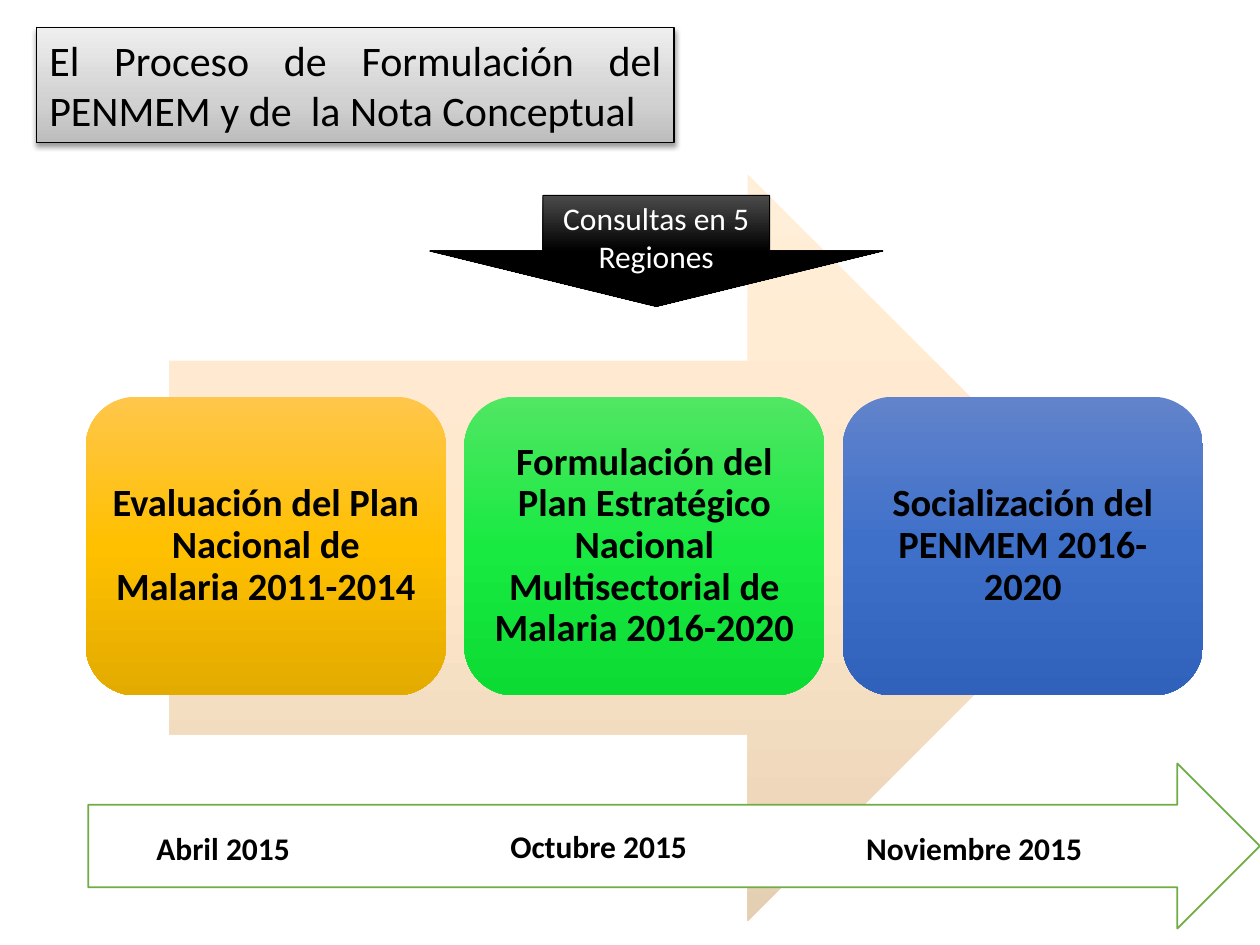
from lxml.etree import SubElement
from pptx import Presentation
from pptx.dml.color import RGBColor
from pptx.enum.shapes import MSO_SHAPE
from pptx.enum.text import MSO_ANCHOR, MSO_AUTO_SIZE, PP_ALIGN
from pptx.oxml.ns import qn
from pptx.util import Cm, Pt

CARDS = [
    ("Evaluación del Plan Nacional de Malaria 2011-2014",
     [(0, "FFC64B"), (50, "FFC000"), (100, "E3AB00")]),
    ("Formulación del Plan Estratégico Nacional Multisectorial de Malaria 2016-2020",
     [(0, "51E663"), (50, "19EA42"), (100, "0CDB34")]),
    ("Socialización del PENMEM 2016-2020",
     [(0, "6183CB"), (50, "3E70CA"), (100, "3062BB")]),
]
DATES = [("Abril 2015", 16.59), ("Octubre 2015", 16.54), ("Noviembre 2015", 16.59)]


def rgb(color):
    return RGBColor.from_string(color)


def set_gradient(sp, stops):
    """Fill from top to bottom with (percent, colour) stops."""
    sp.fill.gradient()
    sp.fill.gradient_angle = 270
    gs_list = sp._element.spPr.find(qn("a:gradFill")).find(qn("a:gsLst"))
    for gs in list(gs_list):
        gs_list.remove(gs)
    for percent, color in stops:
        gs = SubElement(gs_list, qn("a:gs"), pos=str(percent * 1000))
        SubElement(gs, qn("a:srgbClr"), val=color)


def set_line(sp, color, width):
    sp.line.color.rgb = rgb(color)
    sp.line.width = Pt(width)


def add_soft_shadow(sp):
    effects = SubElement(sp._element.spPr, qn("a:effectLst"))
    shadow = SubElement(effects, qn("a:outerShdw"), blurRad=str(Pt(3.1)),
                        dist=str(Pt(1.6)), dir="5400000", rotWithShape="0")
    color = SubElement(shadow, qn("a:srgbClr"), val="000000")
    SubElement(color, qn("a:alpha"), val="38000")


def set_text(sp, text, size, bold=False, color="000000", align=PP_ALIGN.CENTER,
             anchor=MSO_ANCHOR.MIDDLE, spacing=1.0):
    tf = sp.text_frame
    tf.word_wrap = True
    tf.auto_size = MSO_AUTO_SIZE.NONE
    tf.vertical_anchor = anchor
    p = tf.paragraphs[0]
    p.text = text
    p.alignment = align
    p.line_spacing = spacing
    p.font.name = "Calibri"
    p.font.size = Pt(size)
    p.font.bold = bold
    p.font.color.rgb = rgb(color)


def add_shape(s, kind, left, top, width, height):
    sp = s.shapes.add_shape(kind, Cm(left), Cm(top), Cm(width), Cm(height))
    sp.shadow.inherit = False
    sp.line.fill.background()
    return sp


def format_title(s):
    sp = s.shapes.title
    sp.left, sp.top, sp.width, sp.height = Cm(0.74), Cm(0.56), Cm(12.85), Cm(2.31)
    set_gradient(sp, [(0, "EEEEEE"), (65, "D1D1D1"), (100, "BDBDBD")])
    set_line(sp, "000000", 0.75)
    add_soft_shadow(sp)
    set_text(sp, "El Proceso de Formulación del PENMEM y de  la Nota Conceptual",
             24, align=PP_ALIGN.JUSTIFY, anchor=MSO_ANCHOR.TOP)


def add_process(s):
    arrow = add_shape(s, MSO_SHAPE.RIGHT_ARROW, 3.4, 3.51, 19.2, 15.06)
    set_gradient(arrow, [(0, "FFEED8"), (50, "FFE8CC"), (100, "E5CFB3")])
    for i, (text, stops) in enumerate(CARDS):
        card = add_shape(s, MSO_SHAPE.ROUNDED_RECTANGLE, 1.73 + 7.63 * i, 8, 7.26, 6.02)
        set_gradient(card, stops)
        set_text(card, text, 22, bold=True, spacing=0.9)
        tf = card.text_frame
        tf.margin_left = tf.margin_right = tf.margin_top = tf.margin_bottom = Cm(0.23)


def add_consultation(s):
    arrow = add_shape(s, MSO_SHAPE.DOWN_ARROW, 8.66, 3.94, 9.14, 2.24)
    set_gradient(arrow, [(0, "4B4B4B"), (50, "000000"), (100, "000000")])
    set_line(arrow, "000000", 0.5)
    set_text(arrow, "Consultas en 5 Regiones", 18, color="FFFFFF")


def add_timeline(s):
    arrow = add_shape(s, MSO_SHAPE.RIGHT_ARROW, 1.78, 15.39, 23.62, 3.33)
    arrow.fill.solid()
    arrow.fill.fore_color.rgb = rgb("FFFFFF")
    set_line(arrow, "70AD47", 1)
    for i, (date, top) in enumerate(DATES):
        box = s.shapes.add_textbox(Cm(1.78 + 7.57 * i), Cm(top), Cm(5.44), Cm(1.02))
        set_text(box, date, 18, bold=True, anchor=MSO_ANCHOR.TOP)


def main():
    prs = Presentation()
    prs.slide_width, prs.slide_height = Cm(25.4), Cm(19.05)
    s = prs.slides.add_slide(prs.slide_layouts[5])
    format_title(s)
    add_process(s)
    add_consultation(s)
    add_timeline(s)
    prs.save("out.pptx")


if __name__ == "__main__":
    main()
